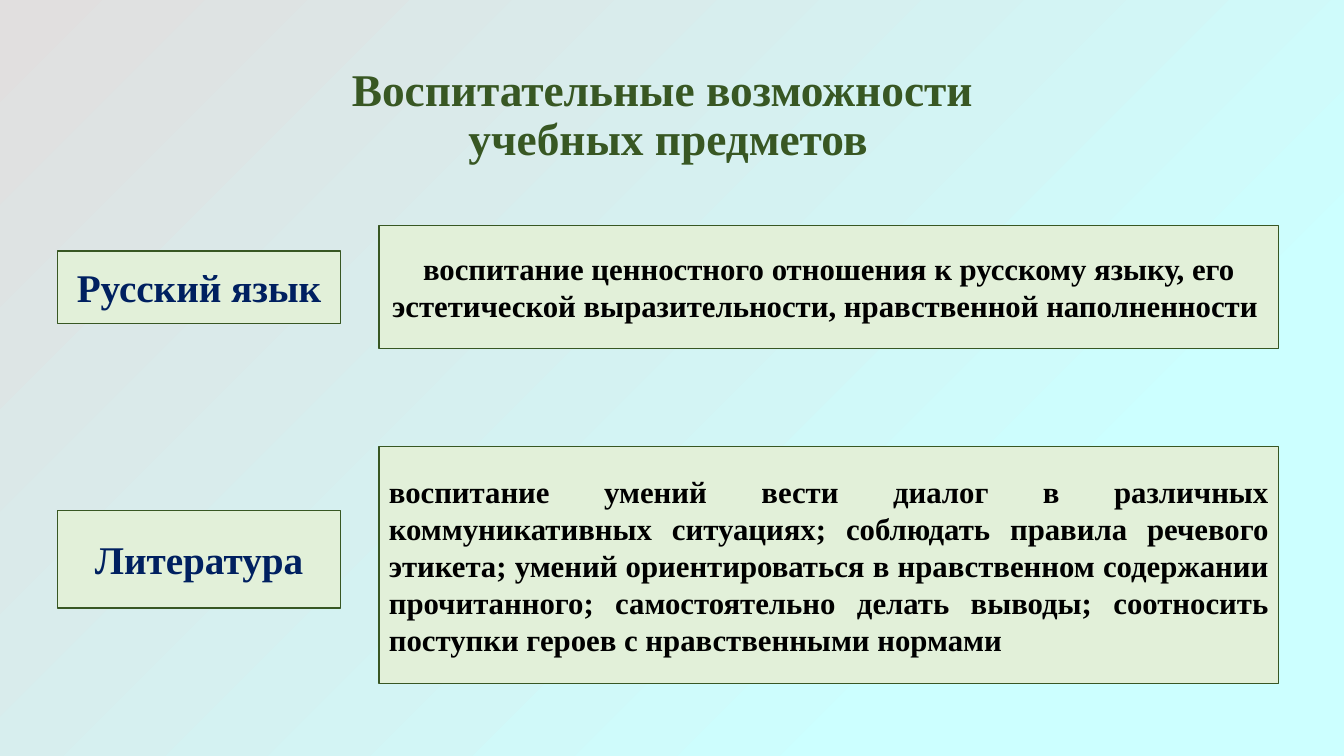
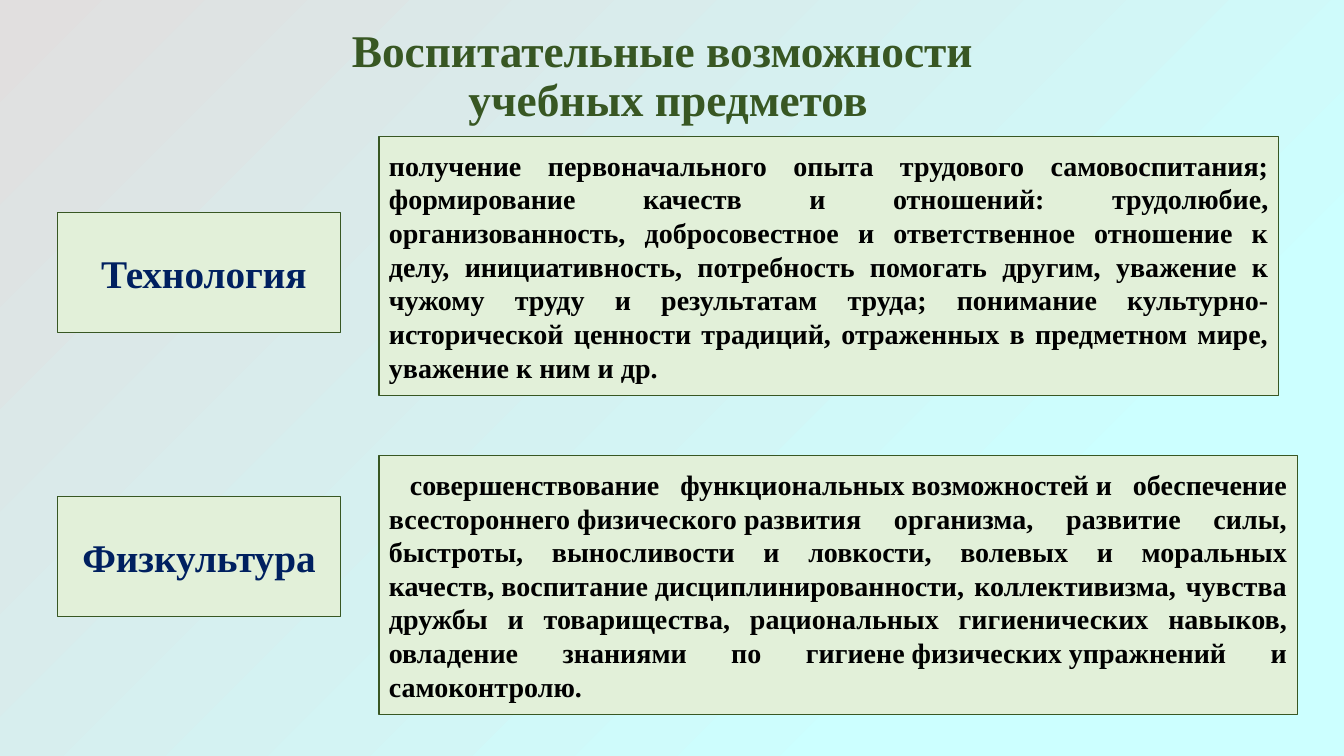
from pptx import Presentation
from pptx.dml.color import RGBColor
from pptx.enum import shapes, text
from pptx.oxml import parse_xml
from pptx.oxml.ns import nsdecls, qn
from pptx.util import Pt

FONT = "Times New Roman"
GREEN, PALE, NAVY, BLACK = "385723", "E2F0D9", "002060", "000000"
CENTER, JUSTIFY = text.PP_ALIGN.CENTER, text.PP_ALIGN.JUSTIFY
NBSP = chr(160)
TITLE = "Воспитательные возможности \vучебных предметов"
TITLE_SIZE = 32.4
LABEL_X, LABEL_W = 41, 202.3
BOX_X, BOX_W = 270.7, 642.5

GRADIENT = f"""<a:gradFill {nsdecls('a')} rotWithShape="1">
  <a:gsLst>
    <a:gs pos="22000"><a:srgbClr val="CCFFFF"><a:alpha val="65000"/></a:srgbClr></a:gs>
    <a:gs pos="100000"><a:srgbClr val="E1DFDF"/></a:gs>
  </a:gsLst>
  <a:path path="circle"><a:fillToRect l="100000" t="100000"/></a:path>
  <a:tileRect r="-100000" b="-100000"/>
</a:gradFill>"""

# Each row: label and description, both with their top and height.
SLIDES = [
    dict(title_y=44.2, size=22, rows=[
        dict(label="Русский язык", label_y=179.3, label_h=51.8,
             body="воспитание ценностного отношения к русскому языку, его "
                  "эстетической выразительности, нравственной наполненности ",
             y=161.1, h=87.8, align=CENTER),
        dict(label="Литература", label_y=364.5, label_h=69.8,
             body="воспитание умений вести диалог в различных коммуникативных "
                  "ситуациях; соблюдать правила речевого этикета; умений "
                  "ориентироваться в нравственном содержании прочитанного; "
                  "самостоятельно делать выводы; соотносить поступки героев "
                  "с нравственными нормами",
             y=319, h=169.2),
    ]),
    dict(title_y=16.6, size=20, rows=[
        dict(label="Технология", label_y=151.9, label_h=85.7, label_indent=7,
             body="получение первоначального опыта трудового самовоспитания; "
                  "формирование качеств и отношений: трудолюбие, "
                  "организованность, добросовестное и ответственное отношение "
                  "к делу, инициативность, потребность помогать другим, "
                  "уважение к чужому труду и результатам труда; понимание "
                  "культурно-исторической ценности традиций, отраженных в "
                  "предметном мире, уважение к ним и др.",
             y=97.5, h=185),
        dict(label="Физкультура", label_y=354.7, label_h=85.7,
             body=f"совершенствование функциональных{NBSP}возможностей{NBSP}и "
                  f"обеспечение всестороннего{NBSP}физического{NBSP}развития "
                  "организма, развитие силы, быстроты, выносливости и "
                  "ловкости, волевых и моральных "
                  f"качеств,{NBSP}воспитание{NBSP}дисциплинированности, "
                  "коллективизма, чувства дружбы и товарищества, рациональных "
                  "гигиенических навыков, овладение знаниями по "
                  f"гигиене{NBSP}физических{NBSP}упражнений и самоконтролю.",
             y=325.4, h=185, w=656, indent=15),
    ]),
]


def color(value):
    return RGBColor.from_string(value)


def put_text(sp, content, size, fill, align=CENTER, spacing=None, indent=0):
    tf = sp.text_frame
    tf.word_wrap = True
    tf.auto_size = text.MSO_AUTO_SIZE.NONE
    tf.vertical_anchor = text.MSO_ANCHOR.MIDDLE
    p = tf.paragraphs[0]
    p.text = content
    p.alignment = align
    if spacing:
        p.line_spacing = spacing
    if indent:
        p._p.get_or_add_pPr().set("indent", str(Pt(indent)))
    for r in p.runs:
        r.font.name, r.font.size, r.font.bold = FONT, Pt(size), True
        r.font.color.rgb = color(fill)


def panel(s, x, y, w, h, content, **style):
    """Add a pale, green-edged rectangle with text."""
    sp = s.shapes.add_shape(shapes.MSO_SHAPE.RECTANGLE, Pt(x), Pt(y), Pt(w), Pt(h))
    sp.shadow.inherit = False
    sp.fill.solid()
    sp.fill.fore_color.rgb = color(PALE)
    sp.line.color.rgb = color(GREEN)
    sp.line.width = Pt(1)
    put_text(sp, content, **style)


def subject_row(s, size, label, label_y, label_h, body, y, h, w=BOX_W,
                align=JUSTIFY, indent=0, label_indent=0):
    panel(s, LABEL_X, label_y, LABEL_W, label_h, label,
          size=28, fill=NAVY, indent=label_indent)
    panel(s, BOX_X, y, w, h, body,
          size=size, fill=BLACK, align=align, indent=indent)


def style_master(master):
    master.background.fill.solid()
    bg = master.element.find(".//" + qn("p:bgPr"))
    bg.replace(bg[0], parse_xml(GRADIENT))
    title_font = master.element.find(f".//{qn('p:titleStyle')}//{qn('a:defRPr')}")
    title_font.set("sz", str(round(TITLE_SIZE * 100)))


def subject_slide(prs, title_y, size, rows):
    s = prs.slides.add_slide(prs.slide_layouts[5])
    title = s.shapes.title
    title.left, title.top = Pt(63.2), Pt(title_y)
    title.width, title.height = Pt(828), Pt(77.8)
    put_text(title, TITLE, size=TITLE_SIZE, fill=GREEN, spacing=0.9)
    for row in rows:
        subject_row(s, size, **row)


def main():
    prs = Presentation()
    prs.slide_width, prs.slide_height = Pt(960), Pt(540)
    style_master(prs.slide_master)
    for content in SLIDES:
        subject_slide(prs, **content)
    prs.save("out.pptx")


if __name__ == "__main__":
    main()
